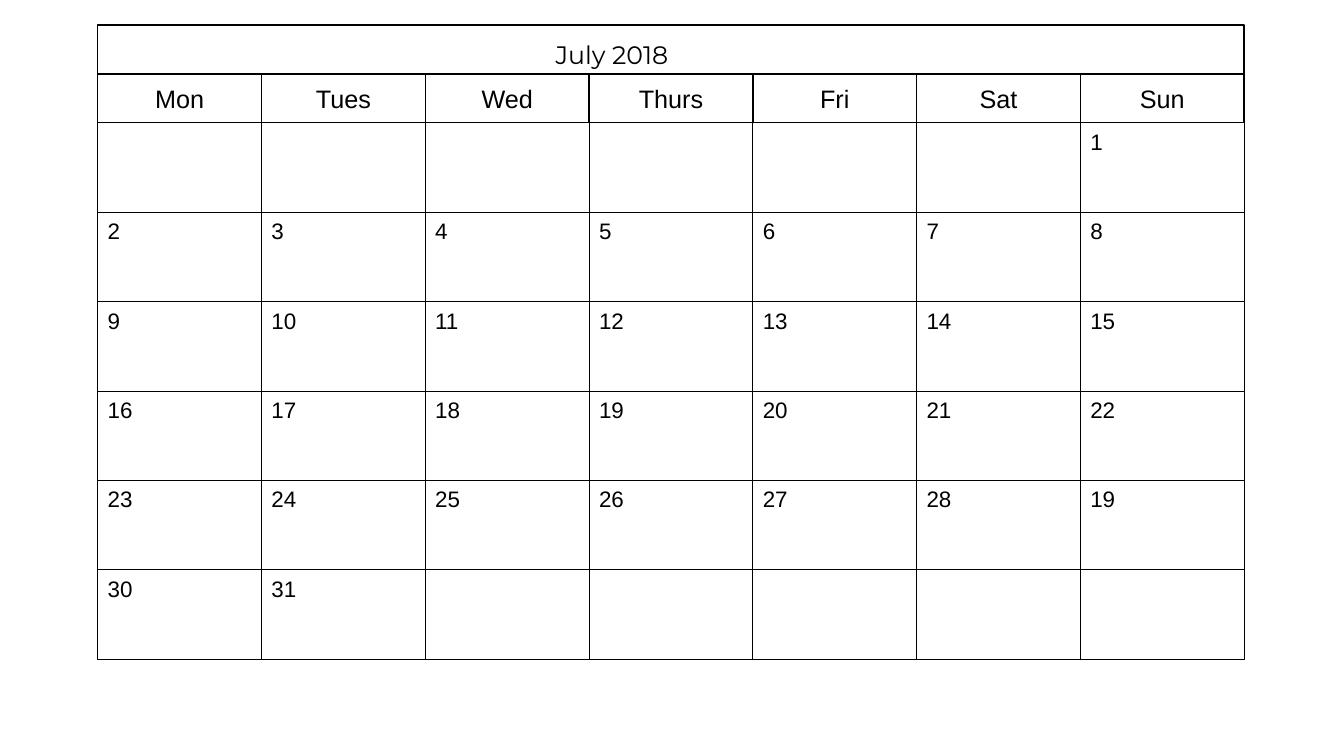
"""Build a one-slide wall calendar for July 2018."""
import pptx
import pptx.util
import pptx.dml.color
import pptx.enum.shapes
import pptx.enum.text

MONTH = "July 2018"
DAYS = ["Mon", "Tues", "Wed", "Thurs", "Fri", "Sat", "Sun"]
WEEKS = [
    ["", "", "", "", "", "", "1"],
    ["2", "3", "4", "5", "6", "7", "8"],
    ["9", "10", "11", "12", "13", "14", "15"],
    ["16", "17", "18", "19", "20", "21", "22"],
    ["23", "24", "25", "26", "27", "28", "19"],
    ["30", "31", "", "", "", "", ""],
]
COLORS = {"paper": "FFFFFF", "ink": "000000"}
WIDE, HIGH = 13.33, 7.5
LEFT, TOP, RIGHT, BASE = 0.97, 0.25, 12.34, 6.54
BAND = 0.485
GRID = TOP + 2 * BAND
COL = (RIGHT - LEFT) / len(DAYS)
ROW = (BASE - GRID) / len(WEEKS)

Inches, Pt = pptx.util.Inches, pptx.util.Pt
ALIGN = pptx.enum.text.PP_ALIGN
ANCHOR = pptx.enum.text.MSO_ANCHOR


def color(name):
    return pptx.dml.color.RGBColor.from_string(COLORS[name])


def fill(shape):
    shape.fill.solid()
    shape.fill.fore_color.rgb = color("paper")


def write(shape, text, size, face, align, anchor, pad):
    frame = shape.text_frame
    frame.vertical_anchor = anchor
    frame.margin_left = frame.margin_right = Inches(0.1)
    frame.margin_top = frame.margin_bottom = Inches(pad)
    para = frame.paragraphs[0]
    para.alignment = align
    para.line_spacing = 1.0
    para.space_before = Pt(0)
    run = para.add_run()
    run.text = text
    run.font.size = Pt(size)
    run.font.name = face
    run.font.color.rgb = color("ink")


def box(slide, x, y, w, h, weight):
    kind = pptx.enum.shapes.MSO_SHAPE.RECTANGLE
    shape = slide.shapes.add_shape(kind, Inches(x), Inches(y), Inches(w), Inches(h))
    shape.shadow.inherit = False
    fill(shape)
    shape.line.color.rgb = color("ink")
    shape.line.width = Pt(weight)
    return shape


def main():
    deck = pptx.Presentation()
    deck.slide_width, deck.slide_height = Inches(WIDE), Inches(HIGH)
    slide = deck.slides.add_slide(deck.slide_layouts[5])

    band = box(slide, LEFT, TOP, RIGHT - LEFT, BAND, 1)
    title = slide.shapes.title
    title.element.addprevious(band.element)
    title.left, title.top = Inches(5.41), Inches(0.34)
    title.width, title.height = Inches(1.53), Inches(0.4)
    fill(title)
    title.text_frame.word_wrap = False
    title.text_frame.auto_size = pptx.enum.text.MSO_AUTO_SIZE.NONE
    write(title, MONTH, 18, "Montserrat", ALIGN.LEFT, ANCHOR.TOP, 0.05)

    for c, day in enumerate(DAYS):
        head = box(slide, LEFT + c * COL, TOP + BAND, COL, BAND, 1)
        write(head, day, 18, "Arial", ALIGN.CENTER, ANCHOR.MIDDLE, 0.02)

    for r, week in enumerate(WEEKS):
        for c, date in enumerate(week):
            cell = box(slide, LEFT + c * COL, GRID + r * ROW, COL, ROW, 0.75)
            if date:
                write(cell, date, 16, "Arial", ALIGN.LEFT, ANCHOR.TOP, 0.05)

    deck.save("out.pptx")


if __name__ == "__main__":
    main()
